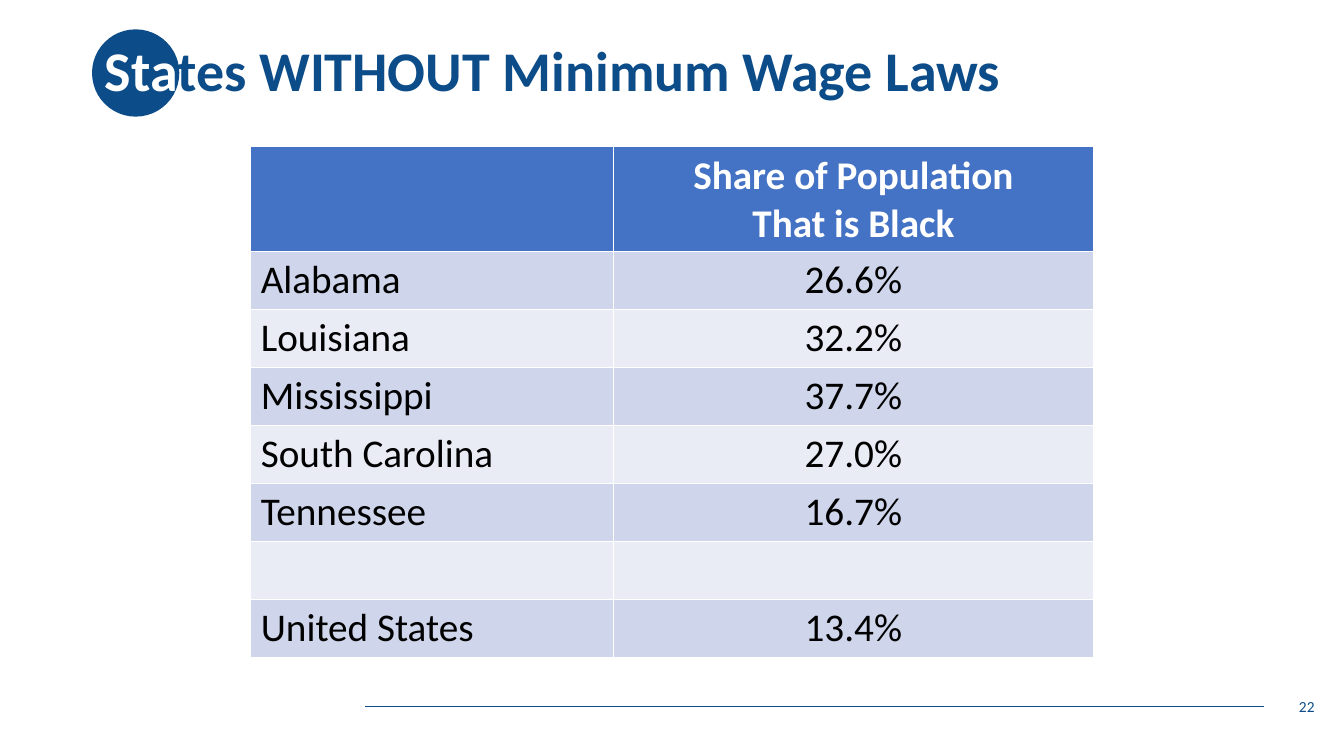
"""Build a slide on states without minimum wage laws."""
from dataclasses import dataclass

from lxml.etree import SubElement
from pptx import Presentation
from pptx.dml.color import RGBColor
from pptx.enum.shapes import MSO_CONNECTOR, MSO_SHAPE
from pptx.enum.text import MSO_ANCHOR, PP_ALIGN
from pptx.oxml.ns import qn
from pptx.util import Cm, Pt


@dataclass(frozen=True)
class Theme:
    """Colours, font and type sizes."""
    navy: RGBColor = RGBColor(0x0C, 0x4C, 0x88)
    white: RGBColor = RGBColor(0xFF, 0xFF, 0xFF)
    black: RGBColor = RGBColor(0x00, 0x00, 0x00)
    head: RGBColor = RGBColor(0x44, 0x72, 0xC4)
    bands: tuple = (RGBColor(0xE9, 0xEB, 0xF5), RGBColor(0xCF, 0xD5, 0xEA))
    face: str = "Calibri"
    title: Pt = Pt(40)
    body: Pt = Pt(28)
    small: Pt = Pt(11)


theme = Theme()


def style(para, size, color=None, bold=False, align=PP_ALIGN.LEFT):
    """Set the font and alignment of a paragraph."""
    para.alignment = align
    para.font.name = theme.face
    para.font.size = size
    para.font.bold = bold
    if color is not None:
        para.font.color.rgb = color


def add_box(left, top, width, height):
    """Add a wrapped, middle-anchored text box and return its paragraph."""
    frame = slide.shapes.add_textbox(Cm(left), Cm(top), Cm(width), Cm(height)).text_frame
    frame.word_wrap = True
    frame.vertical_anchor = MSO_ANCHOR.MIDDLE
    return frame.paragraphs[0]


deck = Presentation()
deck.slide_width, deck.slide_height = Cm(33.87), Cm(19.05)
slide = deck.slides.add_slide(deck.slide_layouts[6])

rule = slide.shapes.add_connector(
    MSO_CONNECTOR.STRAIGHT, Cm(9.2), Cm(17.8), Cm(31.85), Cm(17.8))
rule.line.color.rgb = theme.navy
rule.line.width = Pt(0.5)
SubElement(rule._element.spPr, qn("a:effectLst"))

disc = slide.shapes.add_shape(MSO_SHAPE.OVAL, Cm(2.32), Cm(0.74), Cm(2.2), Cm(2.2))
disc.shadow.inherit = False
disc.fill.solid()
disc.fill.fore_color.rgb = theme.navy
disc.line.fill.background()

title = add_box(2.39, 0, 29.21, 3.68)
style(title, theme.title, bold=True)
title.line_spacing = 0.9
for text, color in (("Sta", theme.white), ("tes WITHOUT Minimum Wage Laws", theme.navy)):
    run = title.add_run()
    run.text = text
    run.font.color.rgb = color

rows = [
    ("", "Share of Population\nThat is Black"),
    ("Alabama", "26.6%"),
    ("Louisiana", "32.2%"),
    ("Mississippi", "37.7%"),
    ("South Carolina", "27.0%"),
    ("Tennessee", "16.7%"),
    ("", ""),
    ("United States", "13.4%"),
]
widths = (9.14, 12.09)
tall, short = 2.64, 1.46
table = slide.shapes.add_table(
    len(rows), len(widths), Cm(6.32), Cm(3.7),
    Cm(sum(widths)), Cm(tall + short * (len(rows) - 1))).table
for col, width in zip(table.columns, widths):
    col.width = Cm(width)
for i, row in enumerate(rows):
    top = i == 0
    table.rows[i].height = Cm(tall if top else short)
    for j, text in enumerate(row):
        cell = table.cell(i, j)
        cell.fill.solid()
        cell.fill.fore_color.rgb = theme.head if top else theme.bands[i % 2]
        cell.vertical_anchor = MSO_ANCHOR.MIDDLE
        cell.text = text
        for para in cell.text_frame.paragraphs:
            style(para, theme.body, theme.white if top else theme.black, top,
                  PP_ALIGN.CENTER if j else PP_ALIGN.LEFT)

page = add_box(25.76, 17.3, 7.62, 1.02)
page.text = "22"
style(page, theme.small, theme.navy, align=PP_ALIGN.RIGHT)

deck.save("out.pptx")
